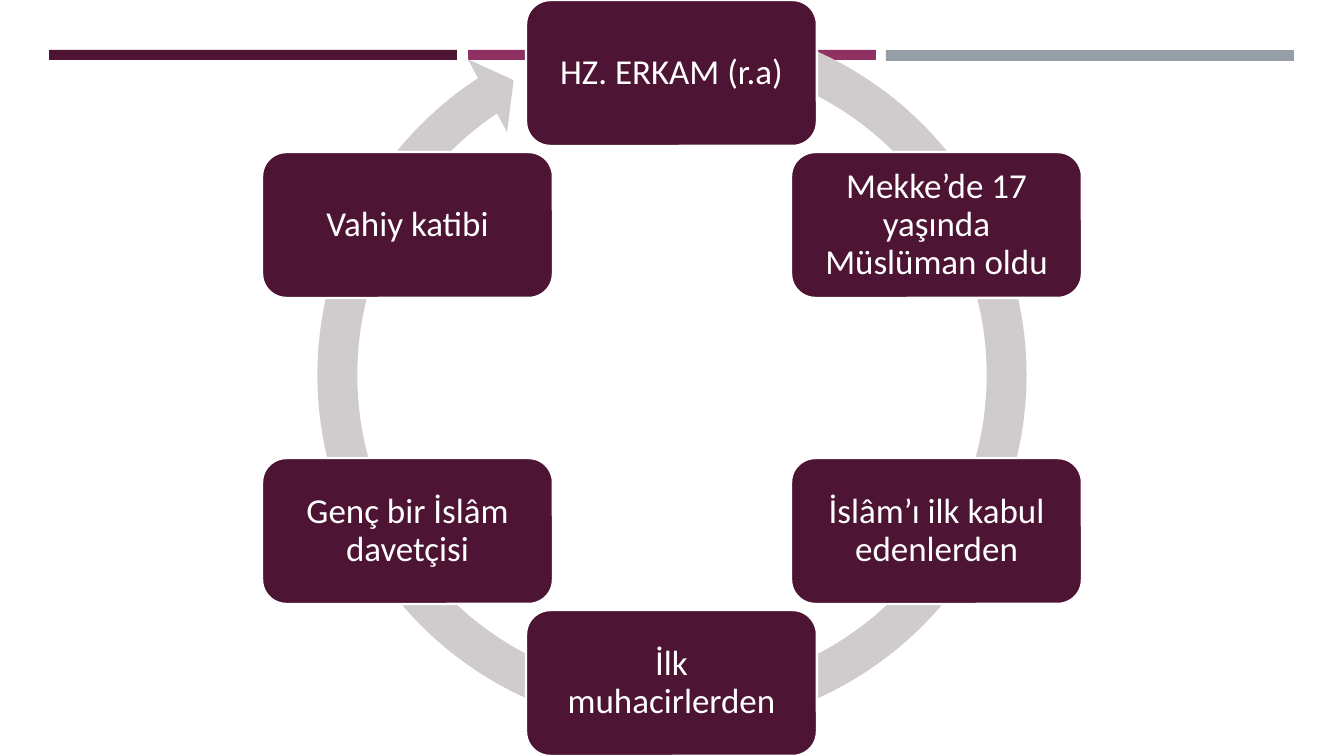
import math
from dataclasses import dataclass

from pptx import Presentation
from pptx.dml.color import RGBColor
from pptx.enum.shapes import MSO_SHAPE
from pptx.enum.text import MSO_ANCHOR, PP_ALIGN
from pptx.util import Emu, Pt

RECT = MSO_SHAPE.RECTANGLE
ROUNDED = MSO_SHAPE.ROUNDED_RECTANGLE
CIRCULAR_ARROW = MSO_SHAPE.CIRCULAR_ARROW
CENTER = PP_ALIGN.CENTER
MIDDLE = MSO_ANCHOR.MIDDLE

SLIDE_W, SLIDE_H = 1344, 756
SCALE = 12192000 / SLIDE_W  # EMU per px
COLORS = {
    "plum": "4D1434",
    "magenta": "903163",
    "slate": "969FA7",
    "ring": "D0CCCE",
    "white": "FFFFFF",
}
FONT = "Calibri"
BOX_W, BOX_H = 291, 146
BOX_MARGIN = 17
CYCLE_RADIUS = 305


@dataclass
class Bar:
    left: int
    width: int
    height: int
    color: str


BARS = [
    Bar(49, 408, 10, "plum"),
    Bar(886, 408, 11, "slate"),
    Bar(468, 408, 10, "magenta"),
]

# Clockwise from the top of the cycle
STEPS = [
    "HZ. ERKAM (r.a)",
    "Mekke’de 17 yaşında Müslüman oldu",
    "İslâm’ı ilk kabul edenlerden",
    "İlk muhacirlerden",
    "Genç bir İslâm davetçisi",
    "Vahiy katibi",
]


def px(n: int) -> Emu:
    return Emu(round(n * SCALE))


def rgb(name: str) -> RGBColor:
    return RGBColor.from_string(COLORS[name])


def add_filled(slide, kind, left: int, top: int, width: int, height: int, color: str):
    sp = slide.shapes.add_shape(kind, px(left), px(top), px(width), px(height))
    sp.shadow.inherit = False
    sp.fill.solid()
    sp.fill.fore_color.rgb = rgb(color)
    sp.line.fill.background()
    return sp


def add_ring(slide) -> None:
    sp = add_filled(slide, CIRCULAR_ARROW, 296, -1, 752, 752, "ring")
    # Band thickness, head angle, end angle, start angle, head half-width
    sp.adjustments[0] = 5.3 / 100
    sp.adjustments[4] = 5.5 / 100
    for i, degrees in enumerate((5.21, 236.55, 285.79), start=1):
        sp.adjustments[i] = degrees * 0.6  # 60000 units per degree, over 100000


def add_step(slide, text: str, angle: float) -> None:
    left = round(SLIDE_W / 2 + CYCLE_RADIUS * math.sin(angle) - BOX_W / 2)
    top = round(SLIDE_H / 2 - CYCLE_RADIUS * math.cos(angle) - BOX_H / 2)
    sp = add_filled(slide, ROUNDED, left, top, BOX_W, BOX_H, "plum")
    sp.line.color.rgb = rgb("white")
    sp.line.width = Pt(1.75)

    tf = sp.text_frame
    tf.word_wrap = True
    tf.vertical_anchor = MIDDLE
    tf.margin_left = tf.margin_right = px(BOX_MARGIN)
    tf.margin_top = tf.margin_bottom = px(BOX_MARGIN)
    p = tf.paragraphs[0]
    p.alignment = CENTER
    p.line_spacing = 0.9
    r = p.add_run()
    r.text = text
    r.font.name = FONT
    r.font.size = Pt(25)
    r.font.color.rgb = rgb("white")


def main() -> None:
    prs = Presentation()
    prs.slide_width, prs.slide_height = px(SLIDE_W), px(SLIDE_H)
    slide = prs.slides.add_slide(prs.slide_layouts[6])

    # Header bars
    for bar in BARS:
        add_filled(slide, RECT, bar.left, 50, bar.width, bar.height, bar.color)

    # Cycle: ring behind, boxes at equal angles
    add_ring(slide)
    for i, text in enumerate(STEPS):
        add_step(slide, text, math.tau * i / len(STEPS))

    prs.save("out.pptx")


if __name__ == "__main__":
    main()
